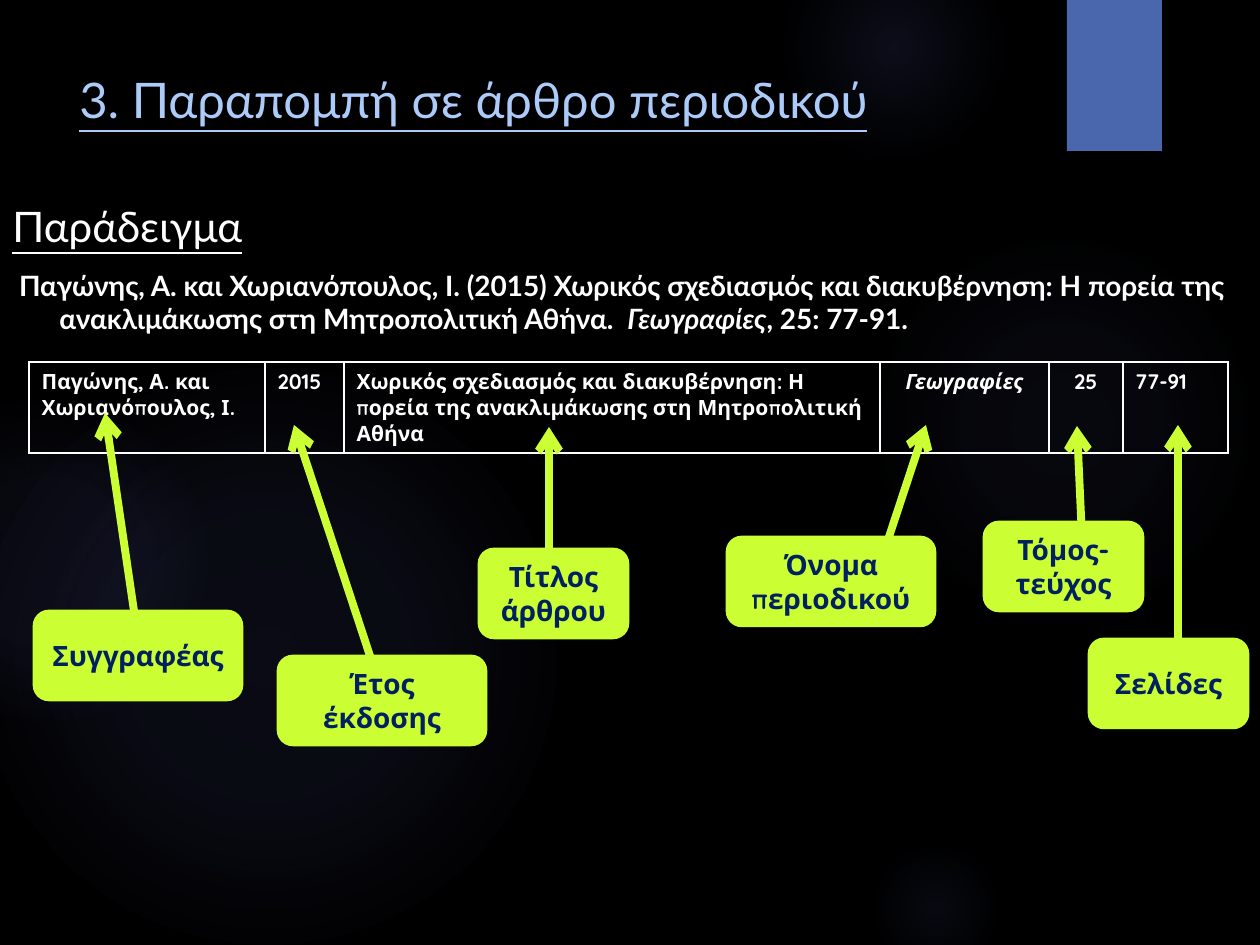
from pptx import Presentation
from pptx.dml.color import RGBColor
from pptx.enum.shapes import MSO_CONNECTOR, MSO_SHAPE
from pptx.enum.text import MSO_ANCHOR, PP_ALIGN
from pptx.oxml import parse_xml
from pptx.oxml.ns import nsdecls
from pptx.util import Pt

UNIT = 914400 / 126
NS = nsdecls("a")
LIME = "CCFF33"


def px(*nums):
    return [round(n * UNIT) for n in nums]


def tint(code):
    return RGBColor.from_string(code)


deck = Presentation()
deck.slide_width, deck.slide_height = px(1260, 945)
slide = deck.slides.add_slide(deck.slide_layouts[6])
slide.background.fill.solid()
slide.background.fill.fore_color.rgb = tint("000000")
shapes = slide.shapes

# Soft glows: left, top, size, then (stop, alpha) in percent
glows = [
    (868, 231, 388, [(0, 7), (36, 6), (69, 0)]),
    (784, -63, 220, [(0, 14), (36, 7), (73, 0)]),
    (868, 840, 136, [(0, 9), (36, 5), (66, 0)]),
    (-21, 368, 577, [(0, 11), (36, 10), (75, 0)]),
    (-116, 399, 325, [(0, 8), (36, 8), (72, 0)]),
]
for left, top, size, stops in glows:
    glow = shapes.add_shape(MSO_SHAPE.OVAL, *px(left, top, size, size))
    glow.shadow.inherit = False
    glow.line.fill.background()
    marks = "".join(
        f'<a:gs pos="{pos * 1000}"><a:srgbClr val="5C64B7">'
        f'<a:alpha val="{alpha * 1000}"/></a:srgbClr></a:gs>'
        for pos, alpha in stops)
    glow._element.spPr.find("{*}prstGeom").addnext(parse_xml(
        f'<a:gradFill {NS}><a:gsLst>{marks}</a:gsLst><a:path path="circle">'
        '<a:fillToRect l="50000" t="50000" r="50000" b="50000"/>'
        '</a:path></a:gradFill>'))

# Corner tab
tab = shapes.add_shape(MSO_SHAPE.RECTANGLE, *px(1067, 0, 95, 151))
tab.shadow.inherit = False
tab.fill.solid()
tab.fill.fore_color.rgb = tint("4A66AC")
tab.line.fill.background()

# Title
frame = shapes.add_textbox(*px(67, 63, 973, 97)).text_frame
frame.word_wrap = True
para = frame.paragraphs[0]
para.text = "3. Παραπομπή σε άρθρο περιοδικού"
para.font.size, para.font.name = Pt(28), "Lato"
para.font.underline = True
para.font.color.rgb = tint("ACCBF9")

# Example heading and citation
frame = shapes.add_textbox(*px(0, 194, 1260, 150)).text_frame
frame.word_wrap = True
head = frame.paragraphs[0]
head.text = "Παράδειγμα"
cite = frame.add_paragraph()
cite.space_before = Pt(10)
for words, slant in [
    (" Παγώνης, Α. και Χωριανόπουλος, Ι. (2015) Χωρικός σχεδιασμός και "
     "διακυβέρνηση: Η πορεία της ανακλιμάκωσης στη Μητροπολιτική Αθήνα.  ", False),
    ("Γεωγραφίες", True),
    (", 25: 77-91.", False),
]:
    run = cite.add_run()
    run.text = words
    run.font.italic = slant
for para, size in [(head, 24), (cite, 16)]:
    hang = px(47)[0]
    para._p.get_or_add_pPr().set("marL", str(hang))
    para._p.get_or_add_pPr().set("indent", str(-hang))
    para.font.size, para.font.name = Pt(size), "Lato"
    para.font.color.rgb = tint("FFFFFF")
head.font.underline = True
cite.font.bold = True

# Table of citation parts: width, text, centred, italic
parts = [
    (236, "Παγώνης, Α. και Χωριανόπουλος, Ι.", False, False),
    (79, "2015", False, False),
    (536, "Χωρικός σχεδιασμός και διακυβέρνηση: Η πορεία της "
          "ανακλιμάκωσης στη Μητροπολιτική Αθήνα", False, False),
    (169, "Γεωγραφίες", True, True),
    (74, "25", True, False),
    (105, "77-91", False, False),
]
table = shapes.add_table(1, len(parts), *px(29, 362, 1199, 91)).table
table.first_row = table.horz_banding = False
for col, (width, words, mid, slant) in enumerate(parts):
    table.columns[col].width = px(width)[0]
    cell = table.cell(0, col)
    para = cell.text_frame.paragraphs[0]
    para.text = words
    para.alignment = PP_ALIGN.CENTER if mid else PP_ALIGN.LEFT
    para.font.size, para.font.name = Pt(12), "Quicksand"
    para.font.bold, para.font.italic = True, slant
    para.font.color.rgb = tint("FFFFFF")
    for side in "LRTB":
        cell._tc.get_or_add_tcPr().append(parse_xml(
            f'<a:ln{side} {NS} w="12700"><a:solidFill>'
            f'<a:srgbClr val="FFFFFF"/></a:solidFill></a:ln{side}>'))
    cell.fill.background()

# Labels with arrows: text, left, top, width, arrow start and end
labels = [
    ("Συγγραφέας", 34, 611, 208, (134, 611, 105, 413)),
    ("Τίτλος άρθρου", 479, 549, 149, (549, 556, 549, 427)),
    ("Όνομα περιοδικού", 727, 537, 208, (885, 549, 926, 425)),
    ("Τόμος-\nτεύχος", 984, 522, 159, (1082, 537, 1077, 426)),
    ("Έτος έκδοσης", 278, 656, 208, (373, 665, 294, 425)),
    ("Σελίδες", 1089, 639, 159, (1178, 656, 1178, 425)),
]
for words, left, top, width, ends in labels:
    box = shapes.add_shape(
        MSO_SHAPE.FLOWCHART_ALTERNATE_PROCESS, *px(left, top, width, 89))
    box.shadow.inherit = False
    box.fill.solid()
    box.fill.fore_color.rgb = box.line.color.rgb = tint(LIME)
    box.line.width = Pt(1.5)
    frame = box.text_frame
    frame.word_wrap = True
    frame.vertical_anchor = MSO_ANCHOR.MIDDLE
    frame.text = words
    for para in frame.paragraphs:
        para.alignment = PP_ALIGN.CENTER
        para.font.size, para.font.name = Pt(16), "Quicksand"
        para.font.bold = True
        para.font.color.rgb = tint("002060")

    arrow = shapes.add_connector(MSO_CONNECTOR.STRAIGHT, *px(*ends))
    arrow.line.width = Pt(4.5)
    arrow.line.color.rgb = tint(LIME)
    arrow.line._get_or_add_ln().append(
        parse_xml(f'<a:tailEnd {NS} type="arrow"/>'))
    arrow._element.spPr.append(parse_xml(f"<a:effectLst {NS}/>"))

deck.save("out.pptx")
